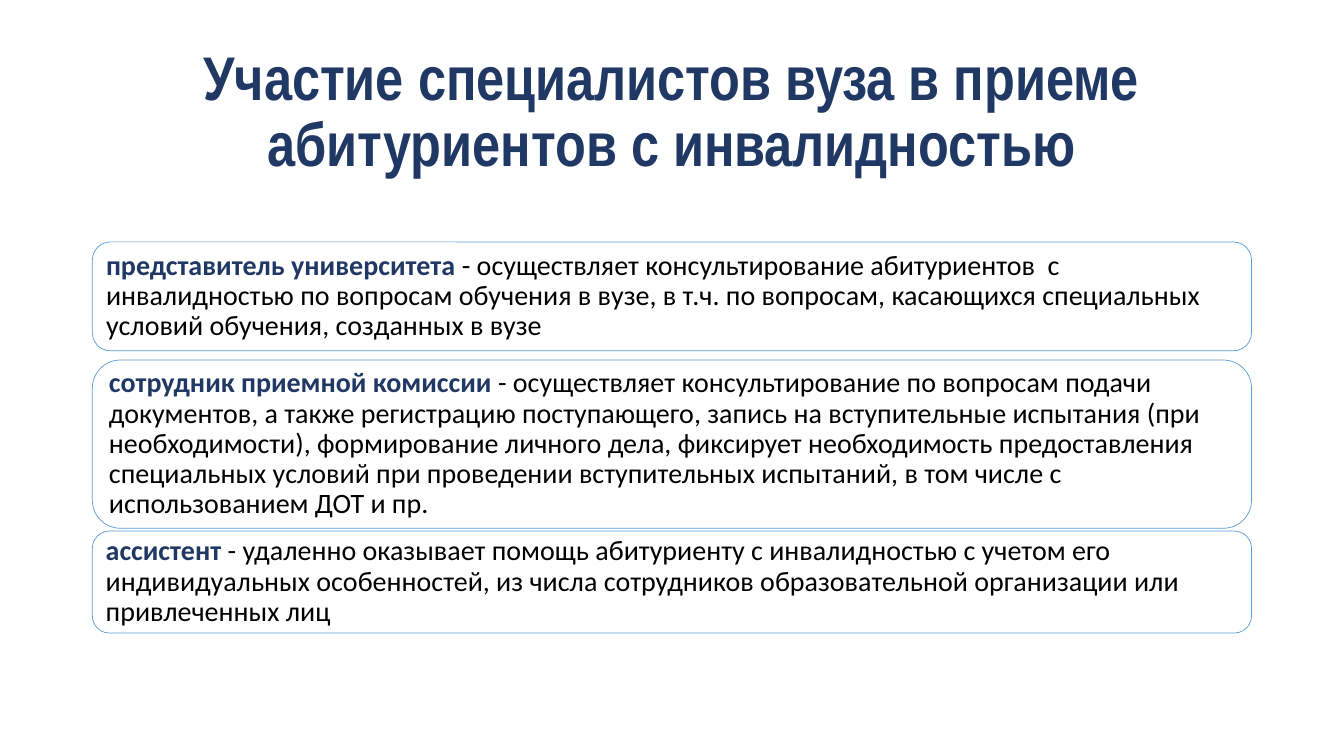
from pptx import Presentation
from pptx.dml.color import RGBColor
from pptx.enum.shapes import MSO_SHAPE
from pptx.enum.text import MSO_ANCHOR, MSO_AUTO_SIZE, PP_ALIGN
from pptx.util import Pt

ROUNDED = MSO_SHAPE.ROUNDED_RECTANGLE
MIDDLE = MSO_ANCHOR.MIDDLE
NO_FIT = MSO_AUTO_SIZE.NONE
CENTER, LEFT = PP_ALIGN.CENTER, PP_ALIGN.LEFT

NAVY = RGBColor(0x20, 0x38, 0x64)
BLUE = RGBColor(0x5B, 0x9B, 0xD5)
BLACK = RGBColor(0, 0, 0)

TITLE = "Участие специалистов вуза в приеме абитуриентов с инвалидностью"
MARGIN, CONTENT_WIDTH = 66, 828

# Role, duties, top and height of each card in points
ROLES = [
    ("представитель университета",
     " - осуществляет консультирование абитуриентов  с инвалидностью "
     "по вопросам обучения в вузе, в т.ч. по вопросам, касающихся "
     "специальных условий обучения, созданных в вузе",
     172.8, 77.8),
    ("сотрудник приемной комиссии",
     " - осуществляет консультирование по вопросам подачи документов, "
     "а также регистрацию поступающего, запись на вступительные испытания "
     "(при необходимости), формирование личного дела, фиксирует "
     "необходимость предоставления специальных условий при проведении "
     "вступительных испытаний, в том числе с использованием ДОТ и пр.",
     257.2, 120.2),
    ("ассистент",
     " - удаленно оказывает помощь абитуриенту с инвалидностью с учетом "
     "его индивидуальных особенностей, из числа сотрудников "
     "образовательной организации или привлеченных лиц",
     379.4, 72.8),
]


def style_span(span, font, size, color, bold):
    span.font.name = font
    span.font.size = Pt(size)
    span.font.color.rgb = color
    span.font.bold = bold


def set_title(page, left, top, width, height):
    title = page.shapes.title
    title.left, title.top = Pt(left), Pt(top)
    title.width, title.height = Pt(width), Pt(height)
    frame = title.text_frame
    frame.text = TITLE
    frame.word_wrap = True
    frame.auto_size = NO_FIT
    frame.vertical_anchor = MIDDLE
    para = frame.paragraphs[0]
    para.alignment = CENTER
    para.line_spacing = 0.9
    style_span(para.runs[0], "Arial Narrow", 44, NAVY, True)


def add_role_card(page, role, duties, left, top, width, height):
    card = page.shapes.add_shape(ROUNDED, Pt(left), Pt(top), Pt(width), Pt(height))
    card.shadow.inherit = False
    card.fill.background()
    card.line.color.rgb = BLUE
    card.line.width = Pt(0.5)

    # Bold role name followed by its duties
    frame = card.text_frame
    frame.word_wrap = True
    frame.vertical_anchor = MIDDLE
    frame.margin_left = frame.margin_right = Pt(6)
    frame.margin_top = frame.margin_bottom = Pt(6)
    para = frame.paragraphs[0]
    para.alignment = LEFT
    para.line_spacing = 0.9
    for text, color, bold in ((role, NAVY, True), (duties, BLACK, False)):
        span = para.add_run()
        span.text = text
        style_span(span, "Calibri", 20, color, bold)


def main():
    deck = Presentation()
    deck.slide_width, deck.slide_height = Pt(960), Pt(540)
    page = deck.slides.add_slide(deck.slide_layouts.get_by_name("Title Only"))

    # Heading
    set_title(page, MARGIN, 28.8, CONTENT_WIDTH, 104.4)

    # Cards of the specialists
    for role, duties, top, height in ROLES:
        add_role_card(page, role, duties, MARGIN, top, CONTENT_WIDTH, height)

    deck.save("out.pptx")


if __name__ == "__main__":
    main()
